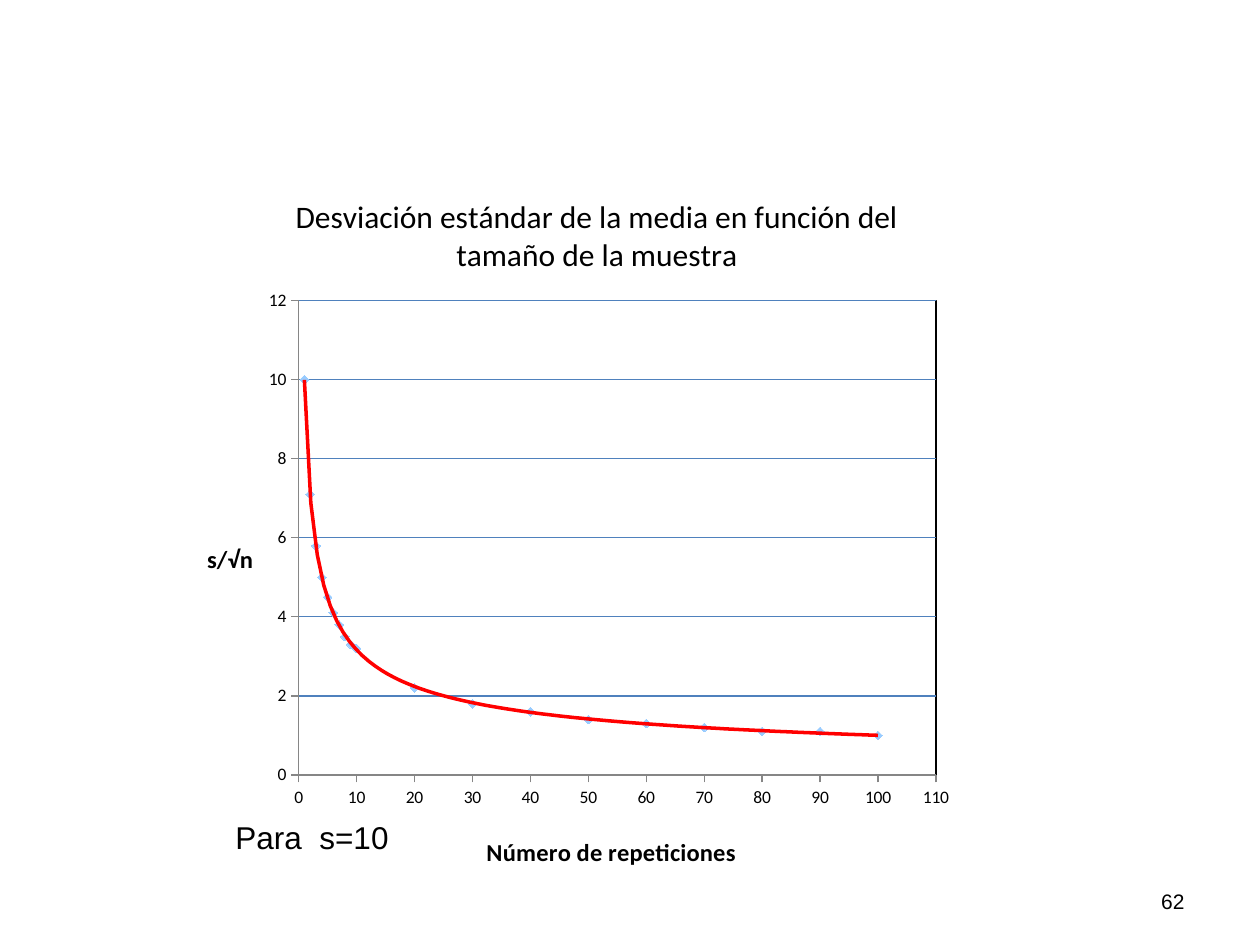
from math import sqrt

from lxml import etree
from pptx import Presentation
from pptx.chart.data import XyChartData
from pptx.dml.color import RGBColor
from pptx.enum.chart import XL_CHART_TYPE, XL_MARKER_STYLE, XL_TICK_MARK
from pptx.enum.text import MSO_ANCHOR, PP_ALIGN
from pptx.oxml import parse_xml
from pptx.oxml.ns import nsdecls, qn
from pptx.util import Inches, Pt

SCATTER = XL_CHART_TYPE.XY_SCATTER
DIAMOND = XL_MARKER_STYLE.DIAMOND
TICK_OUT, TICK_NONE = XL_TICK_MARK.OUTSIDE, XL_TICK_MARK.NONE
TOP, MIDDLE = MSO_ANCHOR.TOP, MSO_ANCHOR.MIDDLE
LEFT, RIGHT = PP_ALIGN.LEFT, PP_ALIGN.RIGHT

THEME = {
    "ink": RGBColor(0, 0, 0), "grid": RGBColor(0x4F, 0x81, 0xBD),
    "axis": RGBColor(0x86, 0x86, 0x86), "marker": RGBColor(0x99, 0xCC, 0xFF),
    "trend": "FF0000", "frame": "000000",
    "text font": "Arial", "chart font": "Calibri",
    "heading": Pt(18), "axis title": Pt(14), "number": Pt(12), "tick": Pt(10),
}

prs = Presentation()
prs.slide_width, prs.slide_height = Inches(10), Inches(7.5)
slide = prs.slides.add_slide(prs.slide_layouts[6])


def set_font(font, face, size, bold=False):
    font.name, font.size, font.bold = face, size, bold
    font.color.rgb = THEME["ink"]


def place(parent, x, y, size=None):
    """Fix a chart part at shares of the chart's width and height."""
    layout = parent.find(qn("c:layout"))
    if layout is None:
        layout = parse_xml(f"<c:layout {nsdecls('c')}/>")
        tx = parent.find(qn("c:tx"))
        parent.insert(0 if tx is None else 1, layout)
    manual = etree.SubElement(layout, qn("c:manualLayout"))
    settings = [("xMode", "edge"), ("yMode", "edge"), ("x", x), ("y", y)]
    if size:
        settings.insert(0, ("layoutTarget", "inner"))
        settings += zip("wh", size)
    for tag, value in settings:
        etree.SubElement(manual, qn(f"c:{tag}")).set("val", str(value))


# Caption and slide number
for text, box, size, align, anchor in (
    ("Para  s=10", (1.77, 6.44, 7.92, 0.71), THEME["heading"], LEFT, TOP),
    ("62", (7.17, 6.95, 2.33, 0.4), THEME["number"], RIGHT, MIDDLE),
):
    frame = slide.shapes.add_textbox(*map(Inches, box)).text_frame
    frame.word_wrap = True
    frame.vertical_anchor = anchor
    paragraph = frame.paragraphs[0]
    paragraph.text = text
    paragraph.alignment = align
    set_font(paragraph.font, THEME["text font"], size)

# Standard error of the mean, s/√n with s = 10
data = XyChartData()
errors = data.add_series("Series 1")
for n in (*range(1, 10), *range(10, 101, 10)):
    errors.add_data_point(n, round(10 / sqrt(n), 1))
chart = slide.shapes.add_chart(
    SCATTER, *map(Inches, (1.4, 1.39, 6.93, 5.56)), data).chart
chart.has_legend = False
set_font(chart.font, THEME["chart font"], THEME["tick"])

# Axes
for axis, top, step in ((chart.category_axis, 110, 10), (chart.value_axis, 12, 2)):
    axis.minimum_scale, axis.maximum_scale, axis.major_unit = 0, top, step
    axis.major_tick_mark, axis.minor_tick_mark = TICK_OUT, TICK_NONE
    axis.has_major_gridlines = False
    axis.tick_labels.number_format = "General"
    axis.tick_labels.number_format_is_linked = False
    axis.format.line.color.rgb = THEME["axis"]
    axis.format.line.width = Pt(0.75)
grid_line = chart.value_axis.major_gridlines.format.line
grid_line.color.rgb = THEME["grid"]
grid_line.width = Pt(0.75)

# Chart and axis titles
chart.has_title = True
for title, text, size, bold, x, y in (
    (chart.chart_title, "Desviación estándar de la media en función del tamaño de la muestra",
     THEME["heading"], False, 0.13, 0.02),
    (chart.category_axis.axis_title, "Número de repeticiones",
     THEME["axis title"], True, 0.35, 0.94),
    (chart.value_axis.axis_title, "s/√n", THEME["axis title"], True, 0.03, 0.52),
):
    title.text_frame.text = text
    set_font(title.text_frame.paragraphs[0].font, THEME["chart font"], size, bold)
    place(title._element, x, y)
value_title = chart.value_axis.axis_title.text_frame
body = value_title._txBody.find(qn("a:bodyPr"))
body.set("rot", "0")
body.set("vert", "horz")

# Points
series = chart.plots[0].series[0]
chart.plots[0].vary_by_categories = False
series.format.line.fill.background()
series.marker.style, series.marker.size = DIAMOND, 5
series.marker.format.fill.solid()
series.marker.format.fill.fore_color.rgb = THEME["marker"]
series.marker.format.line.color.rgb = THEME["marker"]

# Power trend line
series._element.find(qn("c:xVal")).addprevious(parse_xml(
    f'<c:trendline {nsdecls("c", "a")}><c:spPr><a:ln w="{Pt(2)}"><a:solidFill>'
    f'<a:srgbClr val="{THEME["trend"]}"/></a:solidFill></a:ln></c:spPr>'
    '<c:trendlineType val="power"/><c:dispRSqr val="0"/><c:dispEq val="0"/>'
    '</c:trendline>'))

# Plot area with its frame
plot_area = chart._chartSpace.chart.plotArea
place(plot_area, 0.14, 0.18, (0.73, 0.68))
plot_area.append(parse_xml(
    f'<c:spPr {nsdecls("c", "a")}><a:noFill/><a:ln w="{Pt(0.75)}"><a:solidFill>'
    f'<a:srgbClr val="{THEME["frame"]}"/></a:solidFill></a:ln></c:spPr>'))

prs.save("out.pptx")
